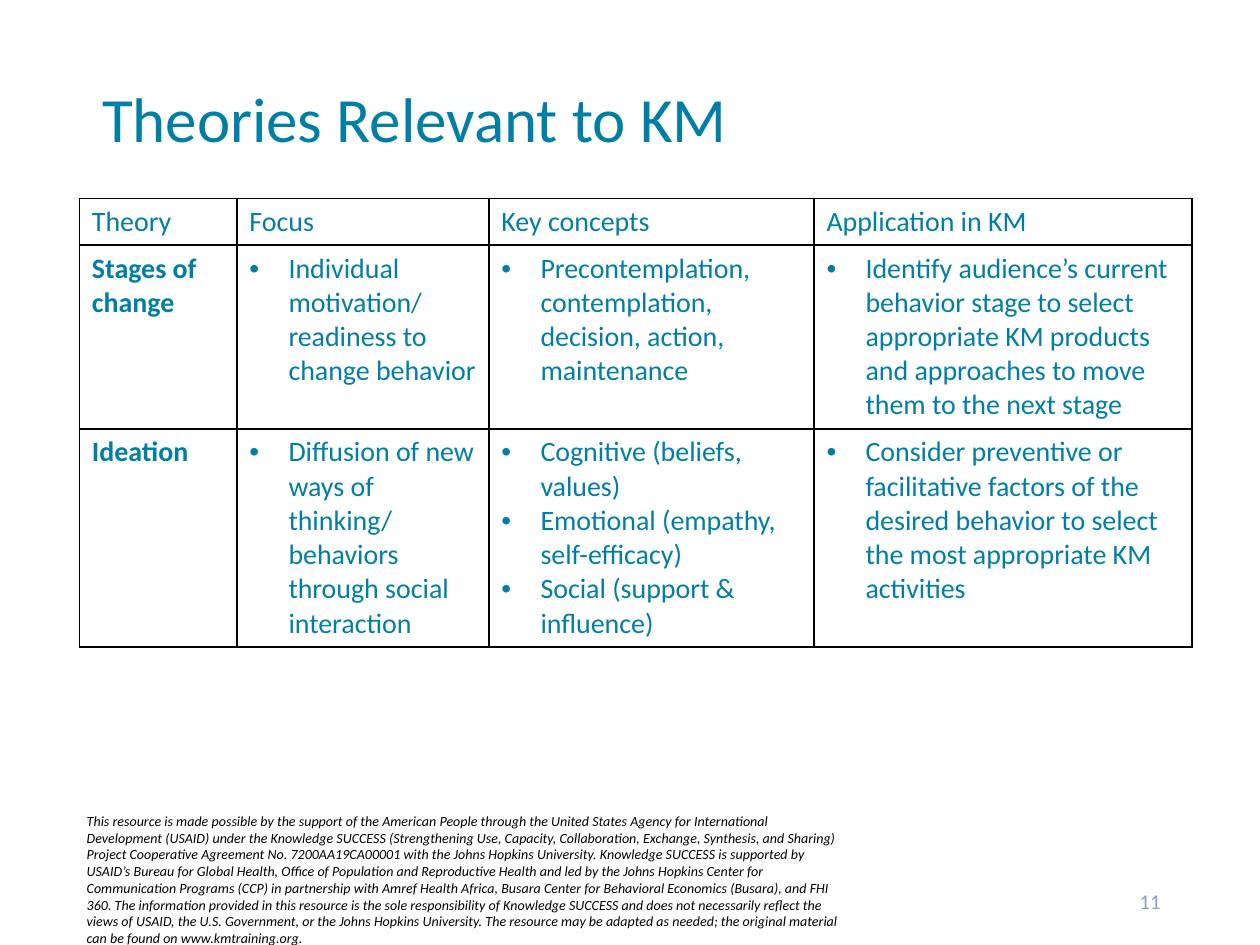
from dataclasses import dataclass

from pptx import Presentation
from pptx import util as u
from pptx.dml.color import RGBColor
from pptx.enum import text
from pptx.oxml import parse_xml
from pptx.oxml.ns import nsdecls


@dataclass(frozen=True)
class Theme:
    font: str = "Calibri"
    main: str = "007EA5"
    number: str = "88A0CB"
    ink: str = "000000"
    title_size: float = 36
    table_size: float = 16
    number_size: float = 12
    credit_size: float = 8
    border_width: float = 1


@dataclass(frozen=True)
class Box:
    """Place and size as shares of the slide."""
    left: float
    top: float
    width: float
    height: float


@dataclass(frozen=True)
class Theory:
    name: str
    focus: list[str]
    concepts: list[str]
    application: list[str]


THEME = Theme()
WIDTH, HEIGHT = u.Inches(10), u.Inches(7.5)
TITLE_BOX = Box(0.063, 0.077, 0.875, 0.133)
TABLE_BOX = Box(0.063, 0.21, 0.883, 0.475)
CREDIT_BOX = Box(0.059, 0.853, 0.623, 0.139)
NUMBER_BOX = Box(0.706, 0.927, 0.225, 0.053)
COLUMNS = (1.25, 2, 2.58, 3)
ROWS = (0.37, 1.46, 1.73)
BULLET_INDENT = u.Inches(0.31)

HEADINGS = ("Theory", "Focus", "Key concepts", "Application in KM")
THEORIES = (
    Theory(
        "Stages of change",
        ["Individual motivation/ readiness to change behavior"],
        ["Precontemplation, contemplation, decision, action, maintenance"],
        ["Identify audience’s current behavior stage to select appropriate KM "
         "products and approaches to move them to the next stage"],
    ),
    Theory(
        "Ideation",
        ["Diffusion of new ways of thinking/ behaviors through social interaction"],
        ["Cognitive (beliefs, values)",
         "Emotional (empathy, self-efficacy)",
         "Social (support & influence)"],
        ["Consider preventive or facilitative factors of the desired behavior "
         "to select the most appropriate KM activities"],
    ),
)
CREDIT_SENTENCES = (
    "This resource is made possible by the support of the American People through "
    "the United States Agency for International Development (USAID) under the "
    "Knowledge SUCCESS (Strengthening Use, Capacity, Collaboration, Exchange, "
    "Synthesis, and Sharing) Project Cooperative Agreement No. 7200AA19CA00001 with "
    "the Johns Hopkins University.",
    "Knowledge SUCCESS is supported by USAID’s Bureau for Global Health, Office of "
    "Population and Reproductive Health and led by the Johns Hopkins Center for "
    "Communication Programs (CCP) in partnership with Amref Health Africa, Busara "
    "Center for Behavioral Economics (Busara), and FHI 360.",
    "The information provided in this resource is the sole responsibility of "
    "Knowledge SUCCESS and does not necessarily reflect the views of USAID, the U.S. "
    "Government, or the Johns Hopkins University.",
    "The resource may be adapted as needed; the original material can be found on "
    "www.kmtraining.org.",
)


def place(box: Box) -> tuple[int, int, int, int]:
    return (round(box.left * WIDTH), round(box.top * HEIGHT),
            round(box.width * WIDTH), round(box.height * HEIGHT))


def add_bullet(paragraph) -> None:
    properties = paragraph._p.get_or_add_pPr()
    properties.set("marL", str(BULLET_INDENT))
    properties.set("indent", str(-BULLET_INDENT))
    for element in (f'<a:buClr {nsdecls("a")}><a:srgbClr val="{THEME.main}"/></a:buClr>',
                    f'<a:buFont {nsdecls("a")} typeface="Arial"/>',
                    f'<a:buChar {nsdecls("a")} char="•"/>'):
        properties.append(parse_xml(element))


def write(frame, lines: list[str], *, size: float, color: str = THEME.main,
          bold: bool = False, italic: bool = False, bullets: bool = False,
          align=text.PP_ALIGN.LEFT, anchor=text.MSO_ANCHOR.TOP) -> None:
    frame.word_wrap = True
    frame.vertical_anchor = anchor
    for index, line in enumerate(lines):
        paragraph = frame.add_paragraph() if index else frame.paragraphs[0]
        paragraph.alignment = align
        if bullets:
            add_bullet(paragraph)
        run = paragraph.add_run()
        run.text = line
        font = run.font
        font.name, font.size = THEME.font, u.Pt(size)
        font.bold, font.italic = bold, italic
        font.color.rgb = RGBColor.from_string(color)


def add_text(slide, box: Box, line: str, **style) -> None:
    write(slide.shapes.add_textbox(*place(box)).text_frame, [line], **style)


def add_borders(cell) -> None:
    properties = cell._tc.get_or_add_tcPr()
    for index, side in enumerate(("lnL", "lnR", "lnT", "lnB")):
        properties.insert(index, parse_xml(
            f'<a:{side} {nsdecls("a")} w="{u.Pt(THEME.border_width)}"><a:solidFill>'
            f'<a:srgbClr val="{THEME.ink}"/></a:solidFill></a:{side}>'))


def fill_cell(cell, lines: list[str], **style) -> None:
    cell.fill.background()
    add_borders(cell)
    write(cell.text_frame, lines, size=THEME.table_size, **style)


def add_title(slide) -> None:
    title = slide.shapes.title
    title.left, title.top, title.width, title.height = place(TITLE_BOX)
    frame = title.text_frame
    frame.auto_size = text.MSO_AUTO_SIZE.NONE
    write(frame, ["Theories Relevant to KM"], size=THEME.title_size)
    paragraph = frame.paragraphs[0]
    paragraph.space_after = u.Pt(4)
    properties = paragraph._p.get_or_add_pPr()
    properties.set("marL", str(u.Inches(0.5)))
    properties.set("indent", str(u.Inches(-0.42)))


def add_theory_table(slide) -> None:
    table = slide.shapes.add_table(len(ROWS), len(COLUMNS), *place(TABLE_BOX)).table
    table.first_row = table.horz_banding = False
    for column, width in zip(table.columns, COLUMNS):
        column.width = u.Inches(width)
    for row, height in zip(table.rows, ROWS):
        row.height = u.Inches(height)
    for column, heading in enumerate(HEADINGS):
        fill_cell(table.cell(0, column), [heading])
    for row, theory in enumerate(THEORIES, start=1):
        fill_cell(table.cell(row, 0), [theory.name], bold=True)
        details = (theory.focus, theory.concepts, theory.application)
        for column, lines in enumerate(details, start=1):
            fill_cell(table.cell(row, column), lines, bullets=True)


def main() -> None:
    presentation = Presentation()
    presentation.slide_width, presentation.slide_height = WIDTH, HEIGHT
    slide = presentation.slides.add_slide(presentation.slide_layouts[5])
    add_text(slide, CREDIT_BOX, " ".join(CREDIT_SENTENCES), size=THEME.credit_size,
             color=THEME.ink, italic=True)
    add_title(slide)
    add_text(slide, NUMBER_BOX, "11", size=THEME.number_size, color=THEME.number,
             align=text.PP_ALIGN.RIGHT, anchor=text.MSO_ANCHOR.MIDDLE)
    add_theory_table(slide)
    presentation.save("out.pptx")


if __name__ == "__main__":
    main()
